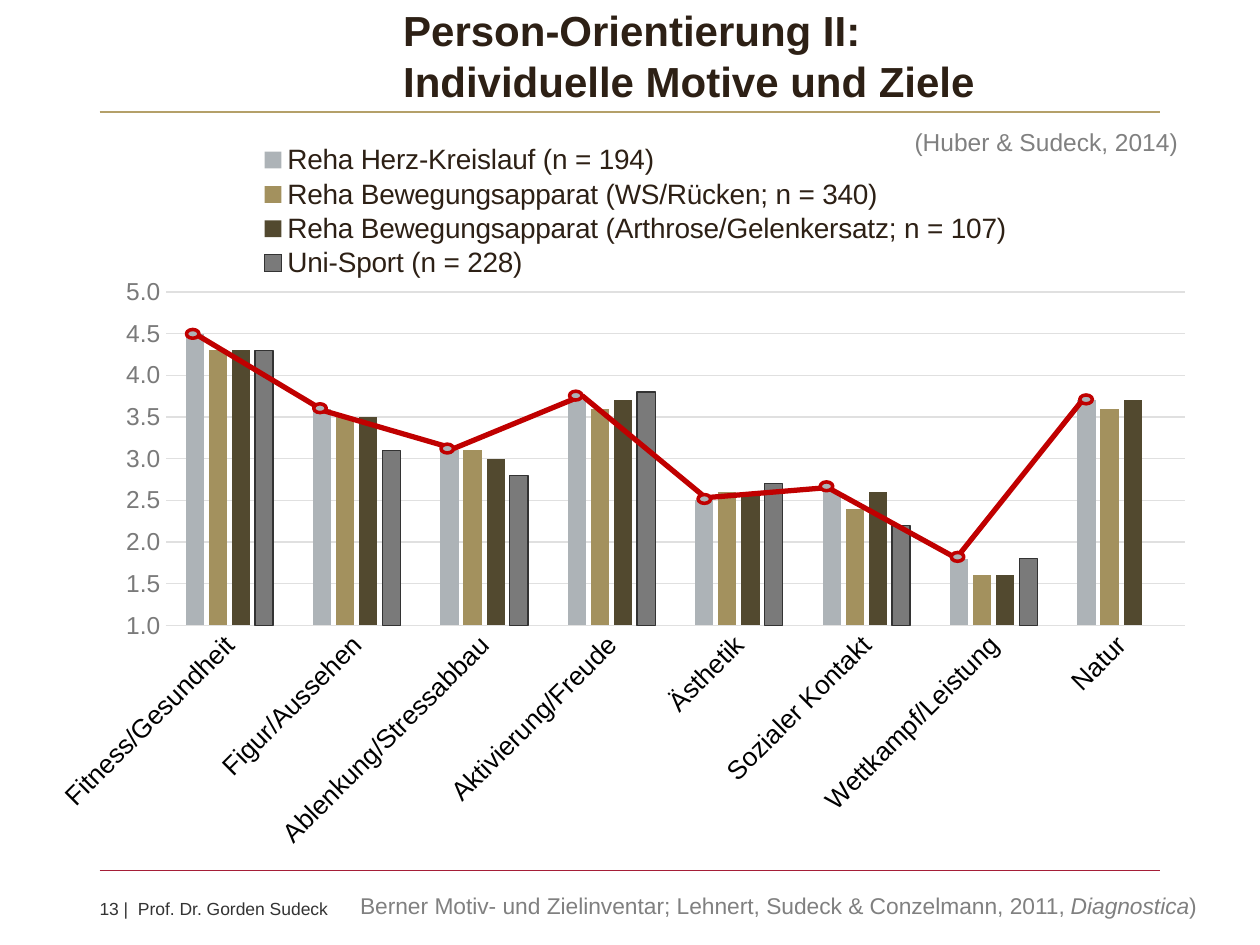
import itertools

import pptx
import pptx.chart.data
import pptx.dml.color
import pptx.enum.chart
import pptx.enum.shapes
import pptx.enum.text
import pptx.oxml
import pptx.oxml.ns
import pptx.util

Inches = pptx.util.Inches
Pt = pptx.util.Pt
RGB = pptx.dml.color.RGBColor

FONT = "Arial"
DARK = RGB(0x2D, 0x20, 0x15)
TEXT = RGB(0x33, 0x33, 0x33)
GREY = RGB(0x80, 0x80, 0x80)
STEEL = RGB(0x7A, 0x7A, 0x7A)
GRID = RGB(0xE0, 0xE0, 0xE0)
BLACK = RGB(0, 0, 0)
SILVER = RGB(0xAD, 0xB3, 0xB7)
GOLD = RGB(0xB4, 0xA0, 0x69)
SAND = RGB(0xA3, 0x91, 0x5E)
BROWN = RGB(0x52, 0x49, 0x2F)
WINE = RGB(0xA5, 0x1E, 0x37)
RED = RGB(0xC0, 0, 0)

MOTIVES = ["Fitness/Gesundheit", "Figur/Aussehen", "Ablenkung/Stressabbau",
           "Aktivierung/Freude", "Ästhetik", "Sozialer Kontakt",
           "Wettkampf/Leistung", "Natur"]
GROUPS = [
    ("Reha Herz-Kreislauf (n = 194)", SILVER,
     [4.5, 3.6, 3.1, 3.7, 2.5, 2.6, 1.8, 3.7]),
    ("Reha Bewegungsapparat (WS/Rücken; n = 340)", SAND,
     [4.3, 3.5, 3.1, 3.6, 2.6, 2.4, 1.6, 3.6]),
    ("Reha Bewegungsapparat (Arthrose/Gelenkersatz; n = 107)", BROWN,
     [4.3, 3.5, 3.0, 3.7, 2.6, 2.6, 1.6, 3.7]),
    ("Uni-Sport (n = 228)", STEEL,
     [4.3, 3.1, 2.8, 3.8, 2.7, 2.2, 1.8, None]),
]
# Corners of the red profile line and centres of its markers
PROFILE = [(1.55, 2.65), (2.57, 3.26), (3.6, 3.56), (4.62, 3.14),
           (5.6, 3.95), (6.57, 3.87), (7.59, 4.43), (8.62, 3.14)]
MARKS = [(1.53, 2.65), (2.54, 3.24), (3.55, 3.56), (4.57, 3.14),
         (5.59, 3.96), (6.56, 3.86), (7.6, 4.42), (8.62, 3.17)]


def style(font, size, color, bold=None):
    font.name = FONT
    font.size = Pt(size)
    font.color.rgb = color
    font.bold = bold


def place(part, kind, x, y, w, h):
    """Give a plot area or legend a fixed place, in parts of the chart."""
    old = part.find(pptx.oxml.ns.qn("c:layout"))
    if old is not None:
        part.remove(old)
    target = '<c:layoutTarget val="inner"/>' if kind == "plot" else ""
    layout = pptx.oxml.parse_xml(
        f'<c:layout {pptx.oxml.ns.nsdecls("c")}><c:manualLayout>{target}'
        '<c:xMode val="edge"/><c:yMode val="edge"/>'
        f'<c:x val="{x}"/><c:y val="{y}"/><c:w val="{w}"/><c:h val="{h}"/>'
        '</c:manualLayout></c:layout>')
    part.insert(0 if kind == "plot" else 1, layout)


class Board:
    """Holds the slide and draws each kind of element on it."""

    def __init__(self, slide):
        self.slide = slide
        self.shapes = slide.shapes

    def title(self, text, x, y, w, h):
        box = self.shapes.title
        box.left, box.top = Inches(x), Inches(y)
        box.width, box.height = Inches(w), Inches(h)
        frame = box.text_frame
        frame.text = text
        frame.margin_left = frame.margin_right = 0
        frame.margin_top = frame.margin_bottom = 0
        frame.vertical_anchor = pptx.enum.text.MSO_ANCHOR.BOTTOM
        frame.auto_size = pptx.enum.text.MSO_AUTO_SIZE.NONE
        par = frame.paragraphs[0]
        par.alignment = pptx.enum.text.PP_ALIGN.LEFT
        par.line_spacing = 1.0
        par.space_before = Pt(0)
        for run in par.runs:
            style(run.font, 24, DARK, True)

    def text(self, parts, x, y, w, h, size, color, inset=True):
        """Write one line from (text, italic) parts."""
        box = self.shapes.add_textbox(Inches(x), Inches(y), Inches(w), Inches(h))
        frame = box.text_frame
        frame.word_wrap = True
        if not inset:
            frame.margin_left = frame.margin_right = 0
            frame.margin_top = frame.margin_bottom = 0
        for words, slant in parts:
            run = frame.paragraphs[0].add_run()
            run.text = words
            style(run.font, size, color)
            run.font.italic = slant

    def line(self, start, end, color, width):
        ends = [Inches(v) for v in (*start, *end)]
        line = self.shapes.add_connector(
            pptx.enum.shapes.MSO_CONNECTOR.STRAIGHT, *ends)
        line.line.color.rgb = color
        line.line.width = Pt(width)
        props = line._element.spPr
        props.append(props.makeelement(pptx.oxml.ns.qn("a:effectLst"), {}))

    def mark(self, x, y, w=0.1, h=0.07):
        dot = self.shapes.add_shape(
            pptx.enum.shapes.MSO_SHAPE.OVAL,
            Inches(x - w / 2), Inches(y - h / 2), Inches(w), Inches(h))
        dot.shadow.inherit = False
        dot.fill.solid()
        dot.fill.fore_color.rgb = SILVER
        dot.line.color.rgb = RED
        dot.line.width = Pt(2)

    def chart(self, x, y, w, h):
        data = pptx.chart.data.CategoryChartData(number_format="0.0")
        data.categories = MOTIVES
        for name, _, values in GROUPS:
            data.add_series(name, values)
        chart = self.shapes.add_chart(
            pptx.enum.chart.XL_CHART_TYPE.COLUMN_CLUSTERED,
            Inches(x), Inches(y), Inches(w), Inches(h), data).chart
        style(chart.font, 10, TEXT)
        chart.has_title = False

        plot = chart.plots[0]
        plot.gap_width, plot.overlap = 219, -27
        plot.vary_by_categories = False
        for series, (_, color, _) in zip(plot.series, GROUPS):
            series.format.fill.solid()
            series.format.fill.fore_color.rgb = color
        series.format.line.color.rgb = TEXT
        series.format.line.width = Pt(0.75)

        cats, vals = chart.category_axis, chart.value_axis
        for axis, size, color in ((cats, 15, BLACK), (vals, 14, STEEL)):
            axis.major_tick_mark = pptx.enum.chart.XL_TICK_MARK.NONE
            axis.minor_tick_mark = pptx.enum.chart.XL_TICK_MARK.NONE
            style(axis.tick_labels.font, size, color)
        cats._element.txPr.bodyPr.set("rot", str(-45 * 60000))
        vals.minimum_scale, vals.maximum_scale = 1, 5
        vals.major_unit = 0.5
        vals.tick_labels.number_format = "#,##0.0"
        vals.tick_labels.number_format_is_linked = False
        vals.format.line.fill.background()
        for rule in (cats.format.line, vals.major_gridlines.format.line):
            rule.color.rgb = GRID
            rule.width = Pt(0.75)

        chart.has_legend = True
        legend = chart.legend
        legend.position = pptx.enum.chart.XL_LEGEND_POSITION.TOP
        legend.include_in_layout = False
        style(legend.font, 16, DARK)
        place(legend._element, "legend", 0.17, 0.02, 0.67, 0.19)
        area = chart._chartSpace.chart.plotArea
        place(area, "plot", 0.095, 0.223, 0.889, 0.448)


def main():
    deck = pptx.Presentation()
    deck.slide_width, deck.slide_height = Inches(10), Inches(7.5)
    board = Board(deck.slides.add_slide(deck.slide_layouts[5]))

    for y, color in ((0.89, GOLD), (6.91, WINE)):
        board.line((0.79, y), (9.21, y), color, 0.75)
    board.text([("13 |  Prof. Dr. Gorden Sudeck", None)],
               0.79, 7.13, 8.43, 0.17, 10, TEXT, inset=False)
    board.chart(0.45, 1, 9.1, 5.91)
    board.title("Person-Orientierung II:\vIndividuelle Motive und Ziele",
                3.2, 0.03, 6.72, 0.81)
    board.text([("Berner Motiv- und Zielinventar; Lehnert, Sudeck & "
                 "Conzelmann, 2011, ", None), ("Diagnostica", True), (")", None)],
               2.76, 7.03, 6.97, 0.32, 13, GREY)
    for start, end in itertools.pairwise(PROFILE):
        board.line(start, end, RED, 3)
    for x, y in MARKS:
        board.mark(x, y)
    board.text([("(Huber & Sudeck, 2014)", None)],
               7.16, 0.96, 2.39, 0.34, 14, GREY)
    deck.save("out.pptx")


if __name__ == "__main__":
    main()
